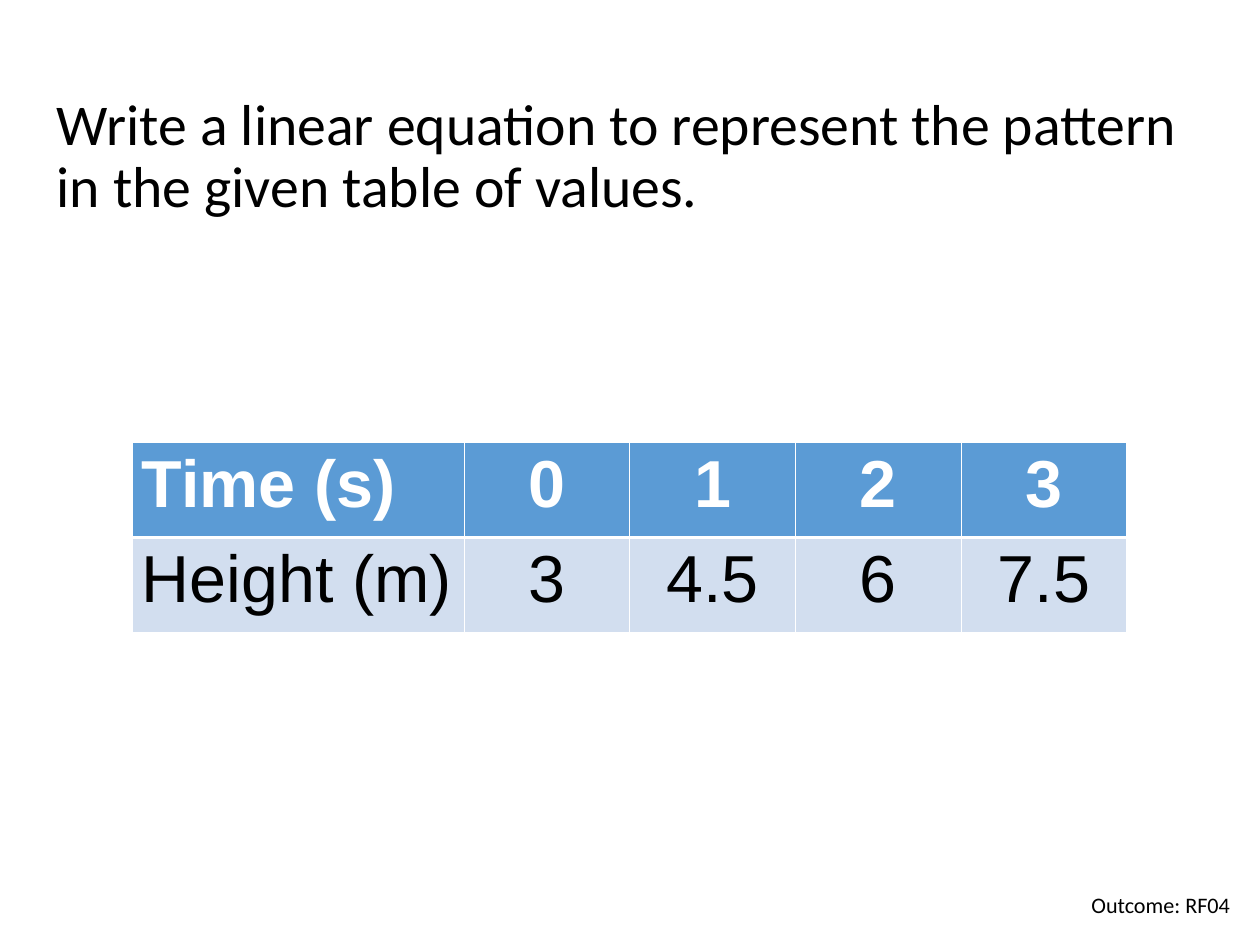
from pptx import Presentation
from pptx.dml.color import RGBColor
from pptx.enum.text import MSO_ANCHOR, MSO_AUTO_SIZE, PP_ALIGN as Align
from pptx.oxml import parse_xml
from pptx.oxml.ns import nsdecls
from pptx.util import Inches, Pt

WIDTH, HEIGHT = 14.22, 10.67
COLUMN, ROW = 1.87, 1.07
READINGS = [
    ["Time (s)", "0", "1", "2", "3"],
    ["Height (m)", "3", "4.5", "6", "7.5"],
]
ROW_STYLES = [
    {"fill": "5B9BD5", "text": "FFFFFF", "bold": True, "top": 1, "bottom": 3},
    {"fill": "D2DEEF", "text": "000000", "bold": False, "top": 3, "bottom": 1},
]


def color(target, value):
    """Give a font or a fill a solid hex colour."""
    fill = getattr(target, "fill", target)
    fill.solid()
    fill.fore_color.rgb = RGBColor.from_string(value)


def write(frame, text, size, face, ink="000000", align=Align.LEFT, bold=False):
    """Put one formatted paragraph into a text frame."""
    frame.text = text
    line = frame.paragraphs[0]
    line.alignment = align
    line.font.size, line.font.name, line.font.bold = Pt(size), face, bold
    color(line.font, ink)
    return line


def add_question(slide, text):
    """Set the question in the title placeholder."""
    title = slide.shapes.title
    title.left, title.top = Inches(0.48), Inches(0.92)
    title.width, title.height = Inches(13.25), Inches(1.29)
    frame = title.text_frame
    frame.word_wrap = True
    frame.auto_size = MSO_AUTO_SIZE.NONE
    frame.vertical_anchor = MSO_ANCHOR.TOP
    frame.margin_left = frame.margin_right = Inches(0.16)
    frame.margin_top = frame.margin_bottom = Inches(0.16)
    write(frame, text, 46.9, "Calibri").line_spacing = 0.9


def add_outcome(slide, text):
    """Set the outcome code in the bottom right corner."""
    width, height = 3.32, 0.4
    box = slide.shapes.add_textbox(
        Inches(WIDTH - width - 0.24), Inches(HEIGHT - height - 0.25),
        Inches(width), Inches(height))
    box.text_frame.word_wrap = True
    write(box.text_frame, text, 18, "Calibri", align=Align.RIGHT)


def rule_cell(cell, top, bottom):
    """Draw white borders around a cell, with widths in points."""
    properties = cell._tc.get_or_add_tcPr()
    sides = [("L", 1), ("R", 1), ("T", top), ("B", bottom)]
    for place, (side, points) in enumerate(sides):
        properties.insert(place, parse_xml(
            f'<a:ln{side} {nsdecls("a")} w="{Pt(points)}"><a:solidFill>'
            f'<a:srgbClr val="FFFFFF"/></a:solidFill></a:ln{side}>'))


def add_readings(slide, readings):
    """Build the table of values with a double-width label column."""
    units = [2] + [1] * (len(readings[0]) - 1)
    table = slide.shapes.add_table(
        len(readings), len(units), Inches(1.5), Inches(5),
        Inches(COLUMN * sum(units)), Inches(ROW * len(readings))).table
    for column, unit in zip(table.columns, units):
        column.width = Inches(COLUMN * unit)
    for r, (values, style) in enumerate(zip(readings, ROW_STYLES)):
        for c, value in enumerate(values):
            cell = table.cell(r, c)
            color(cell, style["fill"])
            rule_cell(cell, style["top"], style["bottom"])
            write(cell.text_frame, value, 54, "Arial", style["text"],
                  Align.CENTER if c else Align.LEFT, style["bold"])


def main():
    """Build and save the slide."""
    deck = Presentation()
    deck.slide_width, deck.slide_height = Inches(WIDTH), Inches(HEIGHT)
    slide = deck.slides.add_slide(deck.slide_layouts[5])
    add_question(slide, "Write a linear equation to represent the pattern "
                        "in the given table of values.")
    add_outcome(slide, "Outcome: RF04")
    add_readings(slide, READINGS)
    deck.save("out.pptx")


if __name__ == "__main__":
    main()
